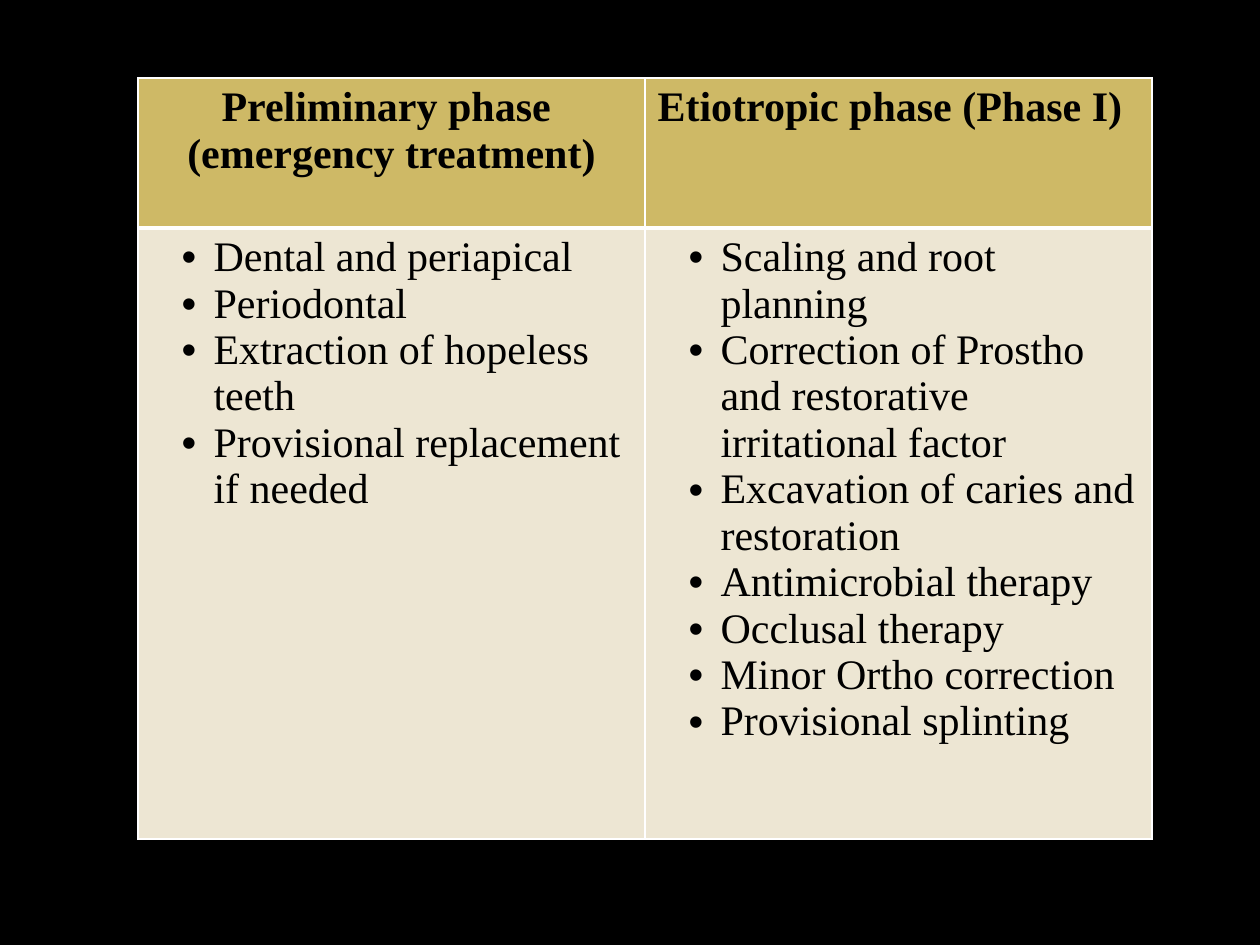
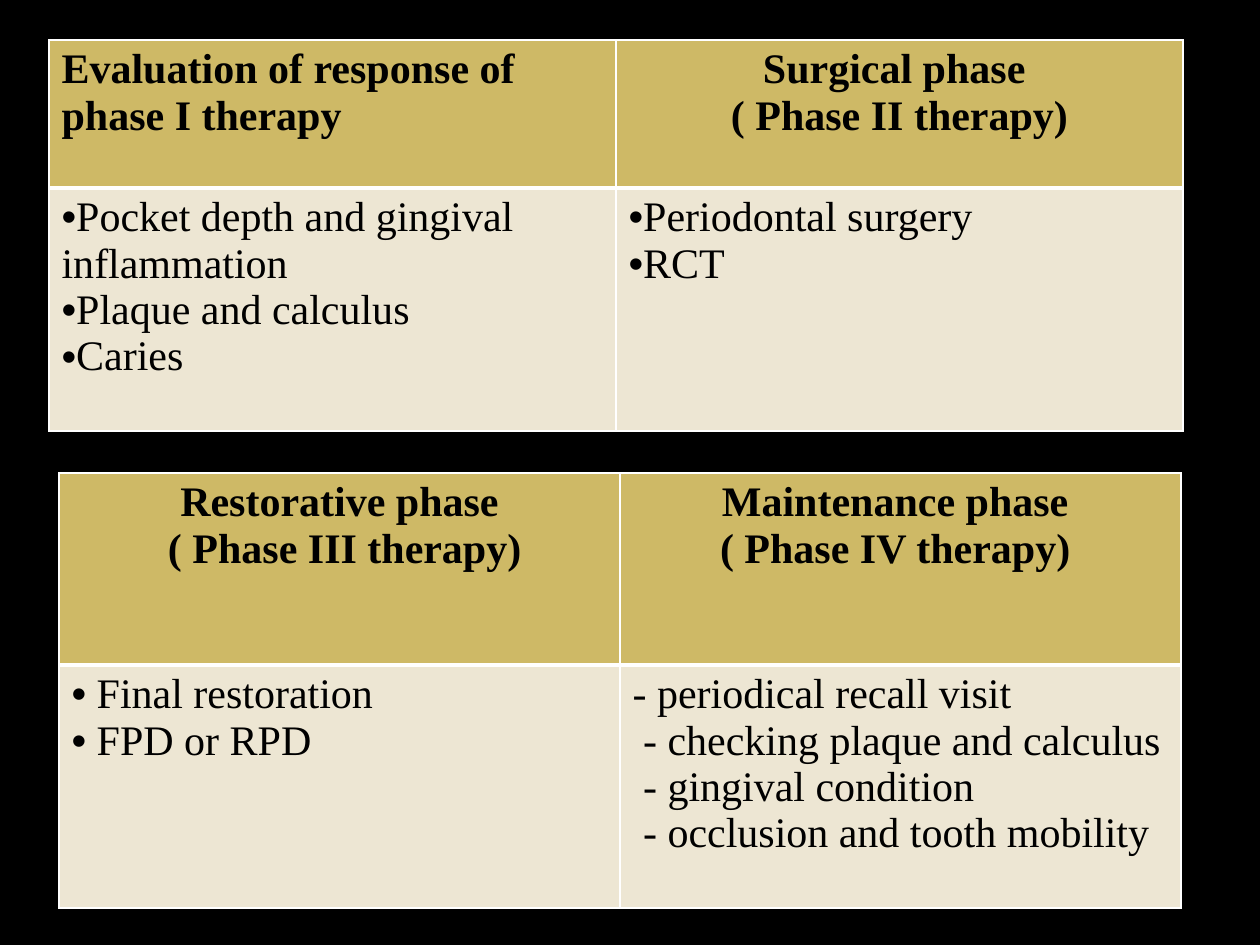
from dataclasses import dataclass

from lxml.etree import SubElement
from pptx import Presentation
from pptx.dml.color import RGBColor
from pptx.enum.text import PP_ALIGN
from pptx.oxml.ns import qn
from pptx.slide import Slide
from pptx.util import Emu, Pt

PX_PER_INCH = 126
COLORS = {
    "background": "000000",
    "heading": "CEB966",
    "body": "EDE6D3",
    "border": "FFFFFF",
    "text": "000000",
}
FONT = "Times New Roman"
FONT_SIZE = 24
THIN, THICK = 1, 3


@dataclass(frozen=True)
class Phase:
    heading: list[str]
    items: list[str]
    align: PP_ALIGN = PP_ALIGN.CENTER
    bullet: str | None = "•"


@dataclass(frozen=True)
class PhaseTable:
    left: int
    top: int
    column_width: int
    heading_height: int
    body_height: int
    phases: list[Phase]
    margin: int = 0
    hanging: int = 0


SLIDES = [
    [
        PhaseTable(138, 78, 507, 150, 611, [
            Phase(["Preliminary phase ", "(emergency treatment)"], [
                "Dental and periapical",
                "Periodontal",
                "Extraction of hopeless teeth",
                "Provisional replacement if needed",
            ]),
            Phase(["Etiotropic phase (Phase I)"], [
                "Scaling and root planning",
                "Correction of Prostho and restorative irritational factor",
                "Excavation of caries and restoration",
                "Antimicrobial therapy",
                "Occlusal therapy",
                "Minor Ortho correction",
                "Provisional splinting",
            ], align=PP_ALIGN.LEFT),
        ], margin=63, hanging=32),
    ],
    [
        PhaseTable(49, 40, 567, 148, 243, [
            Phase(["Evaluation of response of phase I therapy"], [
                "Pocket depth and gingival inflammation",
                "Plaque and calculus",
                "Caries",
            ], align=PP_ALIGN.LEFT),
            Phase(["Surgical phase ", "( Phase II therapy)"],
                  ["Periodontal surgery", "RCT"]),
        ]),
        PhaseTable(59, 473, 561, 192, 243, [
            Phase(["Restorative phase", " ( Phase III therapy)"],
                  [" Final restoration", " FPD or RPD"]),
            Phase(["Maintenance phase ", "( Phase IV therapy) "], [
                "- periodical recall visit",
                " - checking plaque and calculus",
                " - gingival condition",
                " - occlusion and tooth mobility",
            ], bullet=None),
        ]),
    ],
]


def px(length: int) -> Emu:
    return Emu(round(length * 914400 / PX_PER_INCH))


def rgb(role: str) -> RGBColor:
    return RGBColor.from_string(COLORS[role])


def write_text(frame, lines: list[str], *, bold: bool = False,
               align: PP_ALIGN = PP_ALIGN.LEFT, bullet: str | None = None,
               margin: int = 0, hanging: int = 0) -> None:
    """Fill a text frame with one paragraph per line."""
    for index, line in enumerate(lines):
        paragraph = frame.add_paragraph() if index else frame.paragraphs[0]
        paragraph.alignment = align
        run = paragraph.add_run()
        run.text = line
        run.font.name = FONT
        run.font.size = Pt(FONT_SIZE)
        run.font.bold = bold
        run.font.color.rgb = rgb("text")
        if bullet:
            properties = paragraph._p.get_or_add_pPr()
            properties.set("marL", str(px(margin)))
            properties.set("indent", str(-px(hanging)))
            SubElement(properties, qn("a:buFont"), typeface="Arial")
            SubElement(properties, qn("a:buChar"), char=bullet)


def style_cell(cell, fill: str, *, top: int, bottom: int) -> None:
    """Set the fill and the border widths, given in points."""
    cell.fill.solid()
    cell.fill.fore_color.rgb = rgb(fill)
    properties = cell._tc.get_or_add_tcPr()
    widths = {"lnL": THIN, "lnR": THIN, "lnT": top, "lnB": bottom}
    for position, (side, width) in enumerate(widths.items()):
        border = SubElement(properties, qn(f"a:{side}"), w=str(Pt(width)))
        solid = SubElement(border, qn("a:solidFill"))
        SubElement(solid, qn("a:srgbClr"), val=COLORS["border"])
        properties.insert(position, border)  # borders precede the fill


def draw_phase_table(slide: Slide, spec: PhaseTable) -> None:
    heights = (spec.heading_height, spec.body_height)
    count = len(spec.phases)
    table = slide.shapes.add_table(
        len(heights), count, px(spec.left), px(spec.top),
        px(spec.column_width * count), px(sum(heights))).table
    table.first_row = table.horz_banding = False
    for row, height in zip(table.rows, heights):
        row.height = px(height)
    for column, phase in enumerate(spec.phases):
        table.columns[column].width = px(spec.column_width)
        heading, body = table.cell(0, column), table.cell(1, column)
        style_cell(heading, "heading", top=THIN, bottom=THICK)
        style_cell(body, "body", top=THICK, bottom=THIN)
        write_text(heading.text_frame, phase.heading, bold=True,
                   align=phase.align)
        write_text(body.text_frame, phase.items, bullet=phase.bullet,
                   margin=spec.margin, hanging=spec.hanging)


def main() -> None:
    deck = Presentation()
    deck.slide_width, deck.slide_height = px(1260), px(945)
    blank = deck.slide_layouts[6]
    for phase_tables in SLIDES:
        slide = deck.slides.add_slide(blank)
        slide.background.fill.solid()
        slide.background.fill.fore_color.rgb = rgb("background")
        for phase_table in phase_tables:
            draw_phase_table(slide, phase_table)
    deck.save("out.pptx")


if __name__ == "__main__":
    main()
